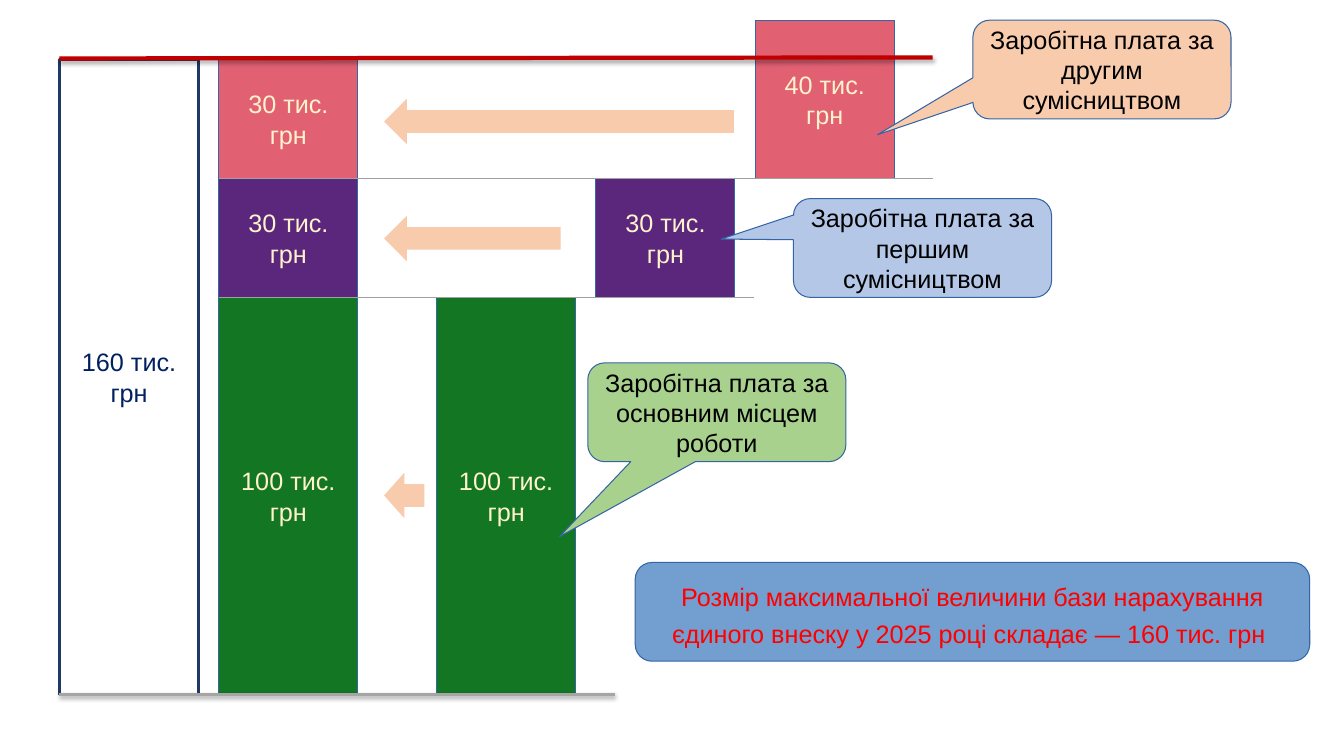
from lxml.etree import SubElement
from pptx import Presentation
from pptx.dml.color import RGBColor
from pptx.enum.shapes import MSO_CONNECTOR, MSO_SHAPE as SHAPE
from pptx.enum.text import MSO_ANCHOR, PP_ALIGN
from pptx.oxml.ns import qn
from pptx.util import Pt

PX = 9144
BASE_Y = 689
LIMIT = 160
PX_PER_THOUSAND = 630 / LIMIT
BAR_W = 138
CALLOUT_W, CALLOUT_H = 256, 98
ARROW_X, ARROW_H = 381, 45

NAVY = RGBColor(0x20, 0x38, 0x64)
NAVY_TEXT = RGBColor(0x00, 0x20, 0x60)
GREEN = RGBColor(0x12, 0x76, 0x22)
PURPLE = RGBColor(0x5B, 0x27, 0x7D)
PINK = RGBColor(0xE1, 0x61, 0x73)
CREAM = RGBColor(0xFF, 0xF2, 0xCC)
LIGHT_GREEN = RGBColor(0xA9, 0xD1, 0x8E)
LIGHT_BLUE = RGBColor(0xB4, 0xC7, 0xE7)
PEACH = RGBColor(0xF8, 0xCB, 0xAD)
BLUE = RGBColor(0x72, 0x9F, 0xCF)
OUTLINE = RGBColor(0x34, 0x65, 0xA4)
RED = RGBColor(0xFF, 0x00, 0x00)
DARK_RED = RGBColor(0xC0, 0x00, 0x00)
GREY = RGBColor(0xA1, 0xA1, 0xA1)
AXIS_GREY = RGBColor(0xA5, 0xA5, 0xA5)
BLACK = RGBColor(0x00, 0x00, 0x00)


def px(*lengths):
    return [round(n) * PX for n in lengths]


def level(amount):
    return round(BASE_Y - amount * PX_PER_THOUSAND)


def add_text(sp, text, color=BLACK, size=18, spacing=None):
    tf = sp.text_frame
    tf.word_wrap = True
    tf.vertical_anchor = MSO_ANCHOR.MIDDLE
    p = tf.paragraphs[0]
    p.alignment = PP_ALIGN.CENTER
    if spacing:
        p.line_spacing = Pt(spacing)
    r = p.add_run()
    r.text = text
    r.font.name = "Arial"
    r.font.size = Pt(size)
    r.font.color.rgb = color


def add_box(s, kind, box, fill=None, line=OUTLINE, width=0, adj=()):
    sp = s.shapes.add_shape(kind, *px(*box))
    sp.shadow.inherit = False
    if fill is None:
        sp.fill.background()
    else:
        sp.fill.solid()
        sp.fill.fore_color.rgb = fill
    if line is None:
        sp.line.fill.background()
    else:
        sp.line.color.rgb = line
        sp.line.width = Pt(width)
    for i, value in enumerate(adj):
        sp.adjustments[i] = value
    return sp


def add_bar(s, x, start, amount, fill=None, color=CREAM, **outline):
    top = level(start + amount)
    box = (x, top, BAR_W, level(start) - top)
    sp = add_box(s, SHAPE.RECTANGLE, box, fill, **outline)
    add_text(sp, f"{amount} тис. грн", color=color)


def add_callout(s, x, y, text, fill, tip):
    box = (x, y, CALLOUT_W, CALLOUT_H)
    sp = add_box(s, SHAPE.ROUNDED_RECTANGULAR_CALLOUT, box, fill, adj=(*tip, 0.17))
    add_text(sp, text)


def add_arrow(s, y, width):
    add_box(s, SHAPE.LEFT_ARROW, (ARROW_X, y, width, ARROW_H), PEACH, line=None)


def add_line(s, x1, y1, x2, y2, color, width, shadow=None):
    c = s.shapes.add_connector(MSO_CONNECTOR.STRAIGHT, *px(x1, y1, x2, y2))
    c.line.color.rgb = color
    c.line.width = Pt(width)
    effects = SubElement(c._element.spPr, qn("a:effectLst"))
    if shadow:
        blur, dist, opacity = shadow
        outer = SubElement(effects, qn("a:outerShdw"), blurRad=str(Pt(blur)),
                           dist=str(Pt(dist)), dir="5400000", rotWithShape="0")
        black = SubElement(outer, qn("a:srgbClr"), val="000000")
        SubElement(black, qn("a:alpha"), val=str(opacity * 1000))


def main():
    prs = Presentation()
    prs.slide_width, prs.slide_height = px(1333, 750)
    s = prs.slides.add_slide(prs.slide_layouts[6])

    note = add_box(s, SHAPE.ROUNDED_RECTANGLE, (630, 558, 669, 98), BLUE, adj=(0.17,))
    add_text(note, "Розмір максимальної величини бази нарахування "
             "єдиного внеску у 2025 році складає — 160 тис. грн ",
             color=RED, spacing=26.2)

    add_bar(s, 59, 0, LIMIT, color=NAVY_TEXT, line=NAVY, width=2.25)
    for x, start, amount, fill in (
        (217, 0, 100, GREEN),
        (217, 100, 30, PURPLE),
        (217, 130, 30, PINK),
        (433, 0, 100, GREEN),
        (591, 100, 30, PURPLE),
        (749, 130, 40, PINK),
    ):
        add_bar(s, x, start, amount, fill)

    for x, y, job, fill, tip in (
        (583, 360, "основним місцем роботи", LIGHT_GREEN, (-0.61, 1.26)),
        (787, 197, "першим сумісництвом", LIGHT_BLUE, (-0.78, -0.09)),
        (965, 20, "другим сумісництвом", PEACH, (-0.87, 0.66)),
    ):
        add_callout(s, x, y, f"Заробітна плата за {job}", fill, tip)

    add_line(s, 59, 58, 925, 57, DARK_RED, 3, shadow=(3.1, 1.8, 35))
    add_line(s, 217, level(100), 748, level(100), GREY, 0.75)
    add_line(s, 217, level(130), 925, level(130), GREY, 0.75)
    add_line(s, 59, BASE_Y, 610, BASE_Y, AXIS_GREY, 2, shadow=(3.1, 1.6, 38))

    for y, width in ((214, 175), (98, 347), (469, 40)):
        add_arrow(s, y, width)

    prs.save("out.pptx")


if __name__ == "__main__":
    main()
